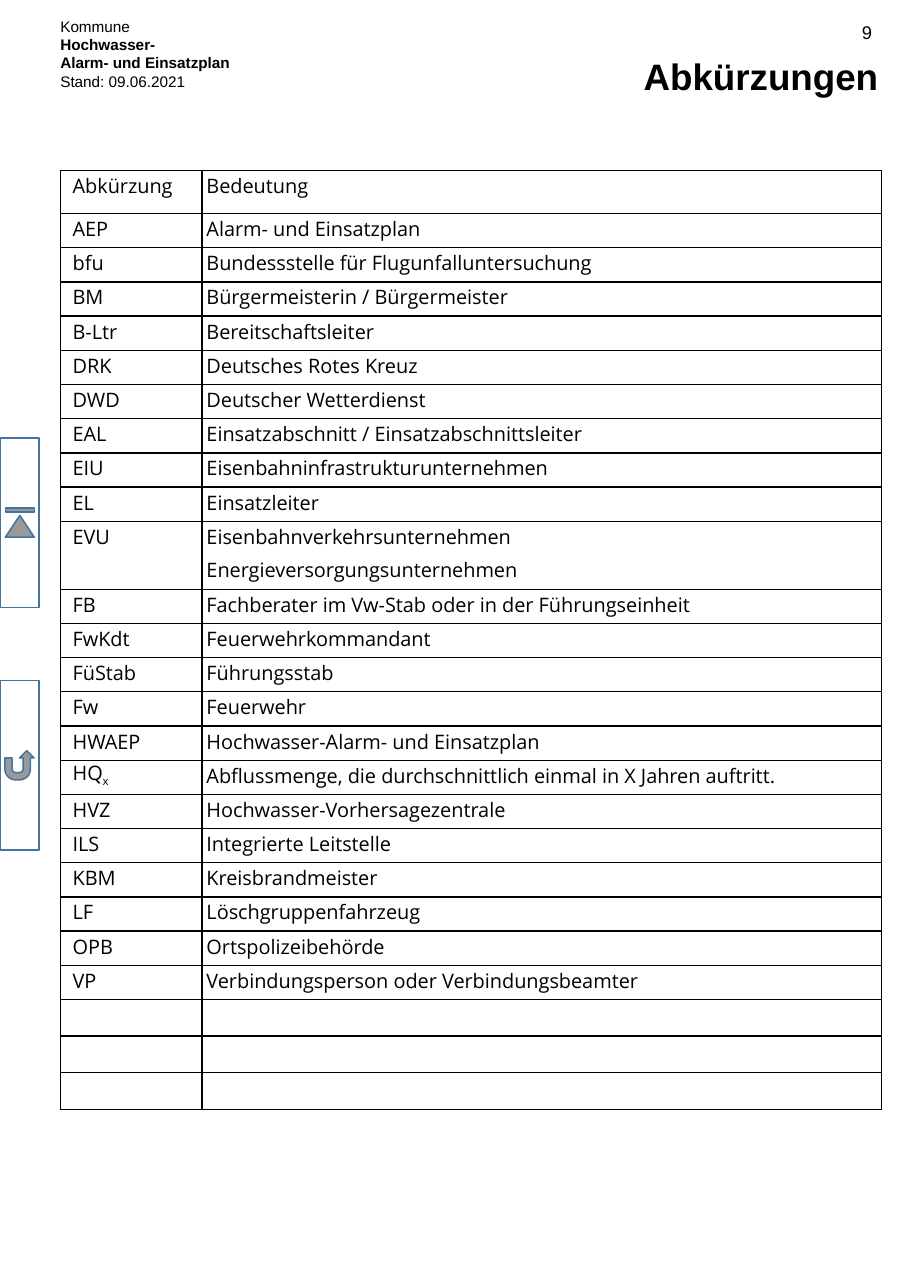
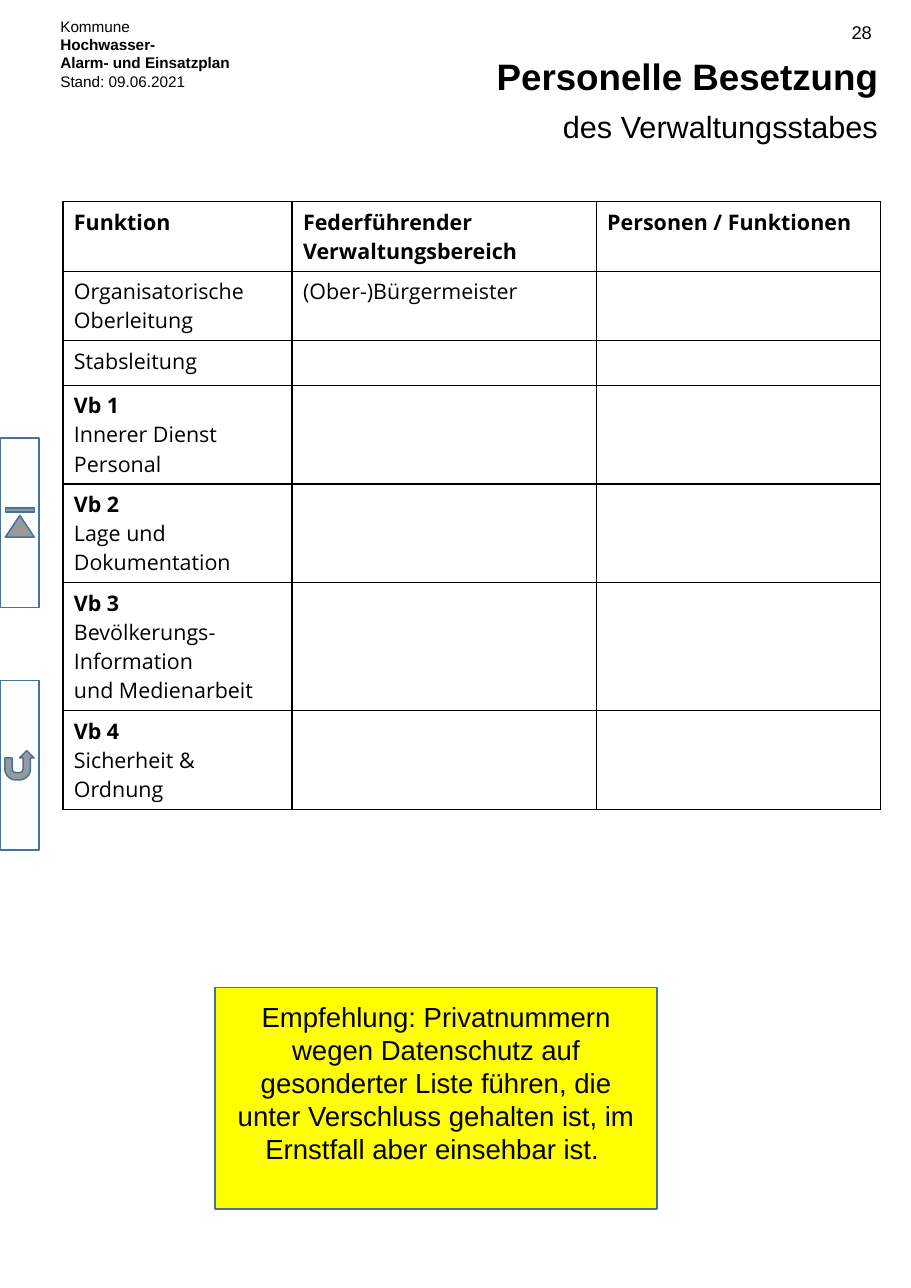
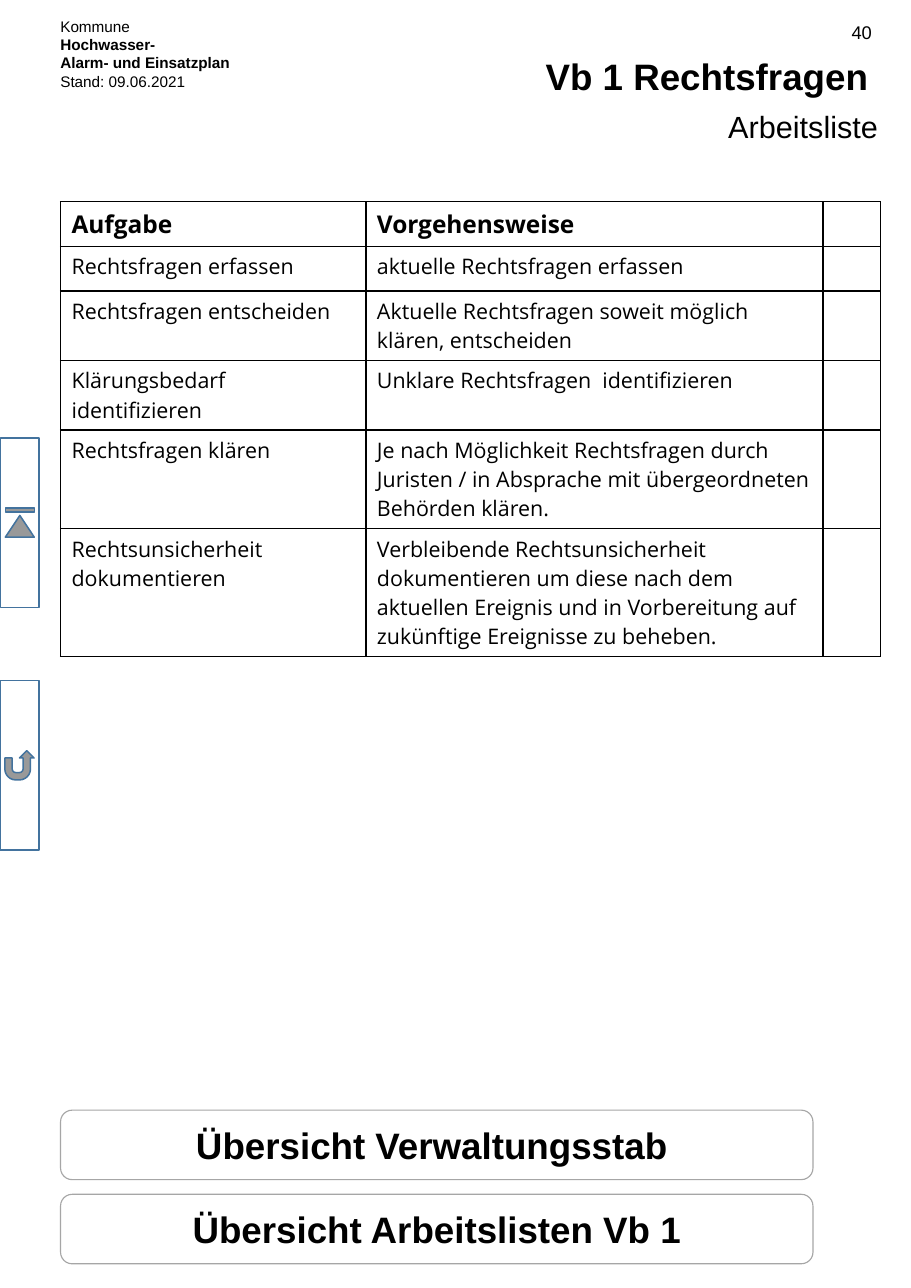
from lxml.etree import SubElement
from pptx import Presentation
from pptx.dml.color import RGBColor
from pptx.enum.shapes import MSO_SHAPE
from pptx.enum.text import MSO_ANCHOR, PP_ALIGN
from pptx.oxml.ns import qn
from pptx.util import Pt

COLORS = {"black": "000000", "white": "FFFFFF", "blue": "43739E",
          "yellow": "FFFF00", "gray": "A6A6A6"}
HEAD = ["Kommune", "Hochwasser-", "Alarm- und Einsatzplan", "Stand: 09.06.2021"]

TERMS = [
    ("Abkürzung", "Bedeutung"),
    ("AEP", "Alarm- und Einsatzplan"),
    ("bfu", "Bundessstelle für Flugunfalluntersuchung"),
    ("BM", "Bürgermeisterin / Bürgermeister"),
    ("B-Ltr", "Bereitschaftsleiter"),
    ("DRK", "Deutsches Rotes Kreuz"),
    ("DWD", "Deutscher Wetterdienst"),
    ("EAL", "Einsatzabschnitt / Einsatzabschnittsleiter"),
    ("EIU", "Eisenbahninfrastrukturunternehmen"),
    ("EL", "Einsatzleiter"),
    ("EVU", "Eisenbahnverkehrsunternehmen\nEnergieversorgungsunternehmen"),
    ("FB", "Fachberater im Vw-Stab oder in der Führungseinheit"),
    ("FwKdt", "Feuerwehrkommandant"),
    ("FüStab", "Führungsstab"),
    ("Fw", "Feuerwehr"),
    ("HWAEP", "Hochwasser-Alarm- und Einsatzplan"),
    ("HQ_x", "Abflussmenge, die durchschnittlich einmal in X Jahren auftritt."),
    ("HVZ", "Hochwasser-Vorhersagezentrale"),
    ("ILS", "Integrierte Leitstelle"),
    ("KBM", "Kreisbrandmeister"),
    ("LF", "Löschgruppenfahrzeug"),
    ("OPB", "Ortspolizeibehörde"),
    ("VP", "Verbindungsperson oder Verbindungsbeamter"),
    ("", ""), ("", ""), ("", ""),
]
STAFF = [
    ("Funktion", "Federführender Verwaltungsbereich", "Personen / Funktionen"),
    ("Organisatorische Oberleitung", "(Ober-)Bürgermeister", ""),
    ("Stabsleitung", "", ""),
    ("Vb 1\nInnerer Dienst\nPersonal", "", ""),
    ("Vb 2\nLage und Dokumentation", "", ""),
    ("Vb 3\nBevölkerungs-Information\nund Medienarbeit", "", ""),
    ("Vb 4\nSicherheit & Ordnung", "", ""),
]
STAFF_LINES = [2, 2, 1, 3, 3, 4, 3]
TASKS = [
    ("Aufgabe", "Vorgehensweise", ""),
    ("Rechtsfragen erfassen", "aktuelle Rechtsfragen erfassen", ""),
    ("Rechtsfragen entscheiden",
     "Aktuelle Rechtsfragen soweit möglich klären, entscheiden", ""),
    ("Klärungsbedarf identifizieren", "Unklare Rechtsfragen  identifizieren", ""),
    ("Rechtsfragen klären",
     "Je nach Möglichkeit Rechtsfragen durch Juristen / in Absprache mit "
     "übergeordneten Behörden klären.", ""),
    ("Rechtsunsicherheit dokumentieren",
     "Verbleibende Rechtsunsicherheit dokumentieren um diese nach dem aktuellen "
     "Ereignis und in Vorbereitung auf zukünftige Ereignisse zu beheben.", ""),
]
TASK_LINES = [1, 1, 2, 2, 3, 4]
NOTE = ("Empfehlung: Privatnummern wegen Datenschutz auf gesonderter Liste führen, "
        "die unter Verschluss gehalten ist, im Ernstfall aber einsehbar ist. ")
BUTTONS = ["Übersicht Verwaltungsstab ", "Übersicht Arbeitslisten Vb 1"]


def color(name):
    return RGBColor.from_string(COLORS[name])


def style(para, size, bold=False, face="Arial"):
    for run in para.runs:
        font = run.font
        font.size, font.bold, font.name = Pt(size), bold, face
        font.color.rgb = color("black")


def write(shape, text, size, bold=False, align=PP_ALIGN.LEFT,
          anchor=MSO_ANCHOR.TOP, inset=(7.2, 3.6, 7.2, 3.6), lead=None):
    frame = shape.text_frame
    frame.word_wrap = True
    frame.vertical_anchor = anchor
    (frame.margin_left, frame.margin_top,
     frame.margin_right, frame.margin_bottom) = map(Pt, inset)
    frame.text = text
    for para in frame.paragraphs:
        para.alignment, para.line_spacing = align, lead
        style(para, size, bold)
    return frame


def add_text(slide, box, text, size, **look):
    return write(slide.shapes.add_textbox(*map(Pt, box)), text, size, **look)


def add_box(slide, kind, box, fill="white", line="blue", width=1):
    shape = slide.shapes.add_shape(kind, *map(Pt, box))
    shape.shadow.inherit = False
    shape.fill.solid()
    shape.fill.fore_color.rgb = color(fill)
    shape.line.color.rgb = color(line)
    shape.line.width = Pt(width)
    return shape


def add_edge(cell):
    props = cell._tc.get_or_add_tcPr()
    for side in ("lnL", "lnR", "lnT", "lnB"):
        line = SubElement(props, qn("a:" + side), w=str(Pt(1)))
        fill = SubElement(line, qn("a:solidFill"))
        SubElement(fill, qn("a:srgbClr"), val=COLORS["black"])


def fill_cell(cell, text, size, bold, tight):
    add_edge(cell)
    cell.fill.solid()
    cell.fill.fore_color.rgb = color("white")
    cell.text = text
    for para, line in zip(cell.text_frame.paragraphs, text.split("\n")):
        base, mark, low = line.partition("_")
        para.text = base
        if mark:
            run = para.add_run()
            run.text = low
            run.font._element.set("baseline", "-25000")
        if tight:
            para.line_spacing, para.space_before = Pt(16), Pt(6)
        style(para, size, bold or line.startswith("Vb "), "Open Sans")
        if not line:
            SubElement(para._p, qn("a:endParaRPr"), sz=str(size * 100))


def add_grid(slide, left, top, rows, cols, highs, size=14, head=14,
             bold=True, tight=False):
    frame = slide.shapes.add_table(len(rows), len(cols), Pt(left), Pt(top),
                                   Pt(sum(cols)), Pt(sum(highs)))
    table = frame.table
    table.first_row = table.horz_banding = False
    for col, width in zip(table.columns, cols):
        col.width = Pt(width)
    for r, (texts, high) in enumerate(zip(rows, highs)):
        table.rows[r].height = Pt(high)
        for c, text in enumerate(texts):
            cell = table.cell(r, c)
            if tight:
                cell.margin_left = cell.margin_right = Pt(3 if c else 7.9)
                cell.margin_top = cell.margin_bottom = Pt(2.9)
            fill_cell(cell, text, head if r == 0 else size,
                      bold and r == 0, tight)


def row_highs(counts):
    return [max(29.2, 19.1 * count + 7.2) for count in counts]


def add_page(deck, number, title, sub=None):
    slide = deck.slides.add_slide(deck.slide_layouts[6])
    head = add_text(slide, (32.4, 7.5, 223.2, 67.7), "\n".join(HEAD), 10)
    for para in head.paragraphs[1:3]:
        style(para, 10, True)
    add_text(slide, (474.2, 10, 102.2, 22.3), number, 12, align=PP_ALIGN.RIGHT,
             inset=(7.9, 3.6, 6.5, 3.6))
    first = add_box(slide, MSO_SHAPE.ACTION_BUTTON_BEGINNING,
                    (-42.5, 329, 110.9, 25.2))
    first.rotation = 90
    add_box(slide, MSO_SHAPE.ACTION_BUTTON_RETURN, (0, 444.7, 25.5, 110.9))
    look = dict(align=PP_ALIGN.RIGHT, inset=(7.2, 3.6, 0, 3.6), lead=0.9)
    add_text(slide, (216.9, 23.8, 357.1, 43.9), title, 24, bold=True,
             anchor=MSO_ANCHOR.BOTTOM, **look)
    if sub:
        add_text(slide, (39.8, 69.8, 534.2, 41.8), sub, 20, **look)
    return slide


def main():
    deck = Presentation()
    deck.slide_width, deck.slide_height = Pt(595.44), Pt(841.68)

    terms = add_page(deck, "9", "Abkürzungen")
    highs = [44.5 if "\n" in row[1] else 22.36 if row[0] else 23.9
             for row in TERMS]
    highs[0] = 28
    add_grid(terms, 39.6, 111.6, TERMS, (92.4, 444), highs, size=13, head=13,
             bold=False, tight=True)

    staff = add_page(deck, "28", "Personelle Besetzung", "des Verwaltungsstabes")
    add_grid(staff, 41.1, 131.8, STAFF, (149.8, 198.8, 185.8),
             row_highs(STAFF_LINES))
    note = add_box(staff, MSO_SHAPE.RECTANGLE, (140.6, 645.2, 288.7, 145), "yellow")
    write(note, NOTE, 18, align=PP_ALIGN.CENTER, inset=(7.2, 8, 7.2, 3.6))

    tasks = add_page(deck, "40", "Vb 1 Rechtsfragen ", "Arbeitsliste")
    add_grid(tasks, 39.6, 131.8, TASKS, (199.6, 298.8, 37.4),
             row_highs(TASK_LINES), head=16)
    for i, label in enumerate(BUTTONS):
        button = add_box(tasks, MSO_SHAPE.ROUNDED_RECTANGLE,
                         (39.6, 725.5 + 55 * i, 491.8, 45.4), "white", "gray", 0.75)
        write(button, label, 24, bold=True, align=PP_ALIGN.CENTER,
              anchor=MSO_ANCHOR.MIDDLE, inset=(2.9, 3.6, 2.9, 3.6))

    deck.save("out.pptx")


if __name__ == "__main__":
    main()
